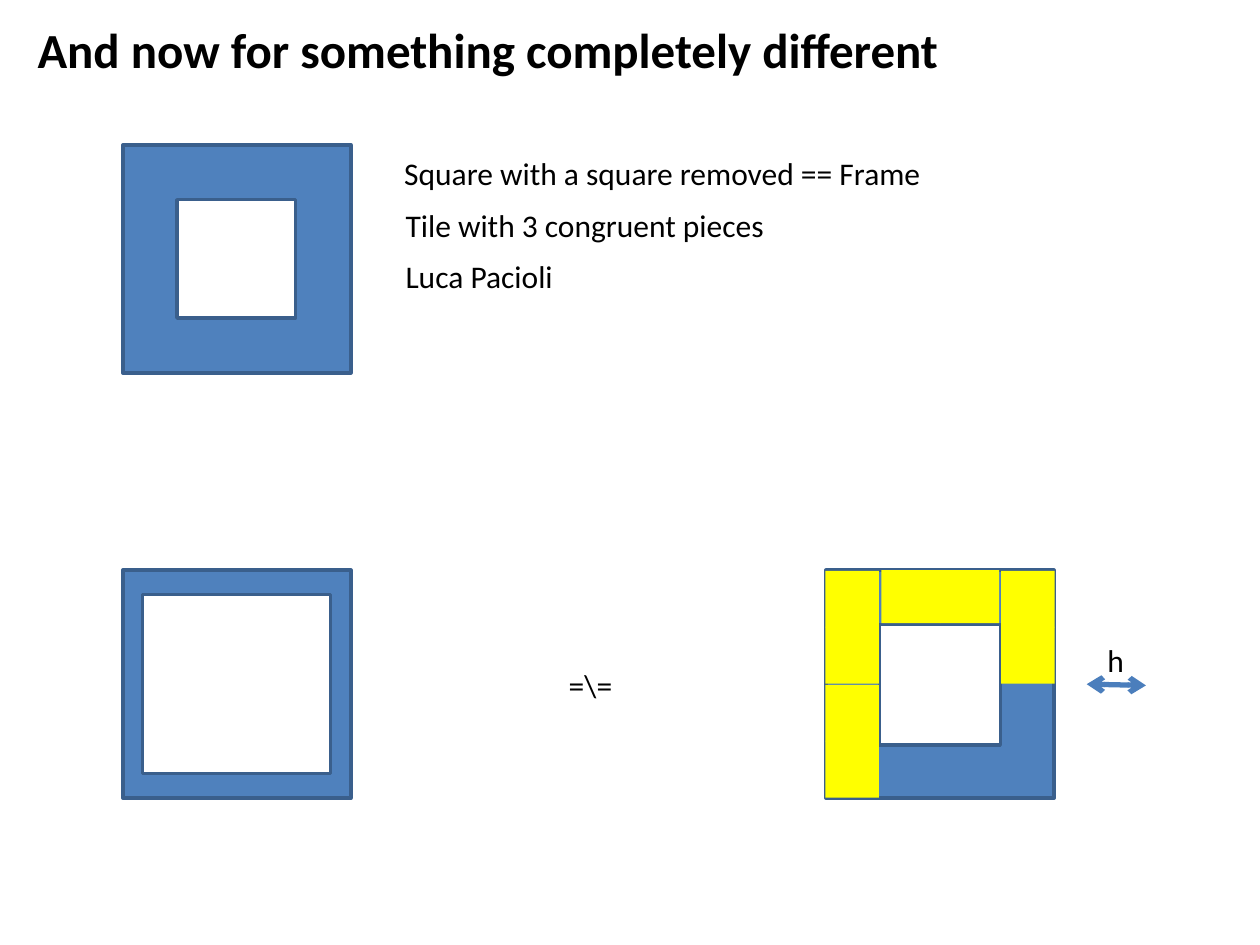
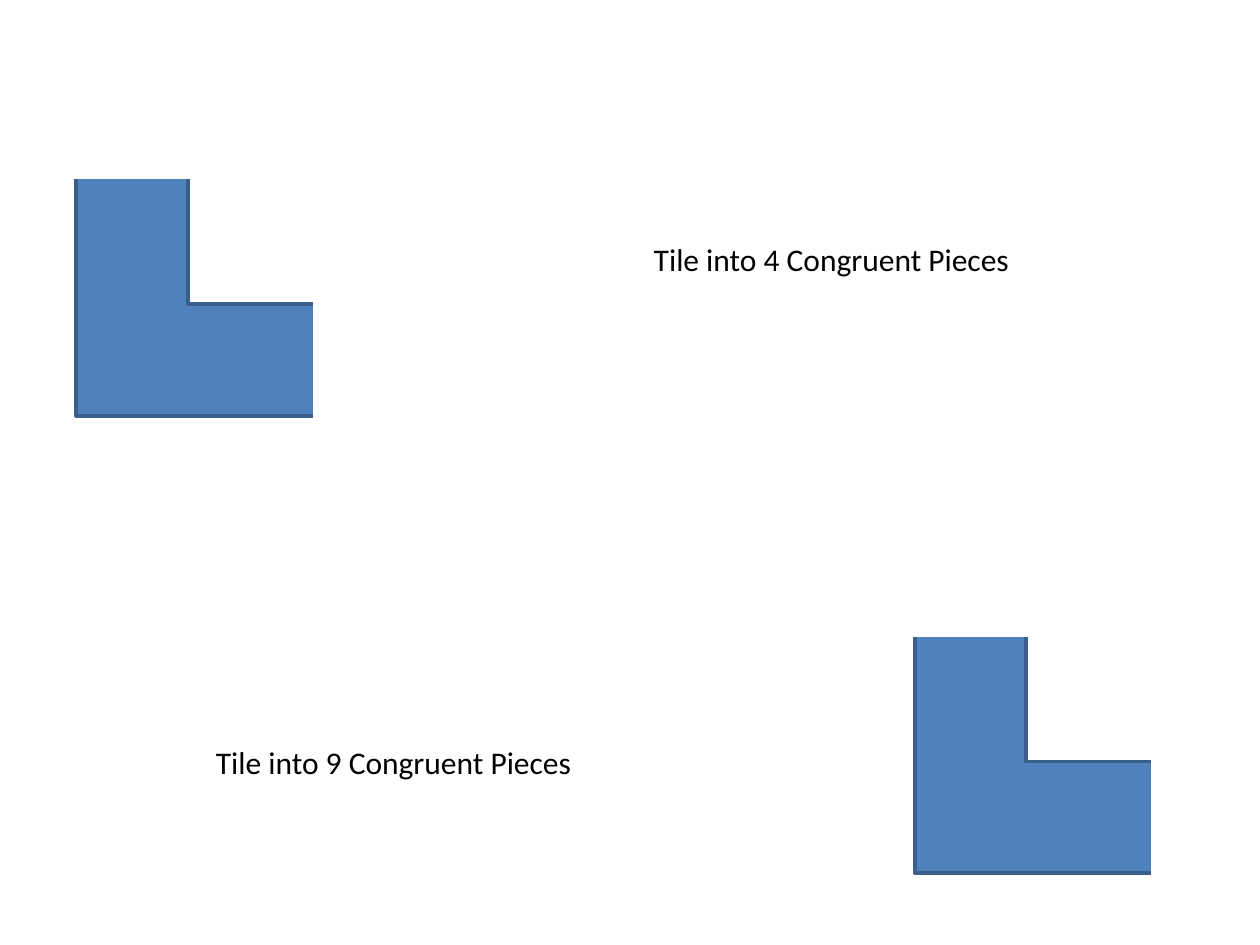
"""Build two slides of tiling puzzles on a grid of 100 columns by 75 rows."""
from typing import NamedTuple, Optional

from lxml.etree import SubElement
from pptx import Presentation
from pptx.dml.color import RGBColor
from pptx.enum.shapes import MSO_CONNECTOR, MSO_SHAPE
from pptx.enum.text import MSO_AUTO_SIZE
from pptx.oxml.ns import qn
from pptx.util import Inches, Pt

COLS = 100
WIDE, HIGH = Inches(10), Inches(7.5)
HUES = {"blue": "4F81BD", "edge": "3A5F8C", "white": "FFFFFF",
        "tile": "FFFF00", "arrow": "4B7EBC", "ink": "000000"}
FONT = "Calibri"
EDGE = Pt(2)
SIDE = 18.1


class Box(NamedTuple):
    left: float
    top: float
    width: float
    height: float


class Frame(NamedTuple):
    left: float
    top: float
    hole: Box
    side: float = SIDE


class Piece(NamedTuple):
    first: Box
    right: float
    down: float


class Label(NamedTuple):
    text: str
    box: Box
    size: int = 18
    bold: bool = False


class Bend(NamedTuple):
    left: float
    top: float


FRAMES = [
    Frame(9.75, 11.5, Box(14.05, 15.85, 9.4, 9.4)),
    Frame(9.75, 45.25, Box(11.3, 47.2, 14.95, 14.2)),
    Frame(65.55, 45.25, Box(69.8, 49.55, 9.6, 9.6)),
]
PIECES = [
    Piece(Box(65.5, 45.3, 4.25, 4.5), 0, 4.45),
    Piece(Box(65.5, 54.35, 4.25, 4.5), 0, 4.45),
    Piece(Box(69.95, 45.25, 4.7, 4.2), 4.65, 0),
    Piece(Box(79.45, 45.3, 4.25, 4.5), 0, 4.45),
]
FACTS = [
    Label("And now for something completely different",
          Box(2, 1.05, 74.4, 5.7), 28, True),
    Label("Square with a square removed == Frame", Box(31.1, 11.7, 43.5, 4)),
    Label("Tile with 3 congruent pieces", Box(31.2, 15.85, 31.5, 4)),
    Label("Luca Pacioli", Box(31.2, 19.9, 13.8, 4)),
    Label("=\\=", Box(44.15, 52.4, 5.5, 4)),
    Label("h", Box(86.9, 50.4, 3.4, 4)),
]
BENDS = [Bend(6.05, -4.8), Bend(72.6, 31.5)]
TASKS = [
    Label("Tile into 4 Congruent Pieces", Box(50.9, 18.6, 31.4, 4)),
    Label("Tile into 9 Congruent Pieces", Box(16.15, 58.5, 31.4, 4)),
]


def cell(count: float) -> int:
    """Turn a count of grid cells into a length."""
    return round(WIDE * count / COLS)


def hue(name: str) -> RGBColor:
    """Look up a colour."""
    return RGBColor.from_string(HUES[name])


def block(shapes, box: Box, fill: str, line: Optional[str] = "edge") -> None:
    """Draw a rectangle."""
    shape = shapes.add_shape(MSO_SHAPE.RECTANGLE, *map(cell, box))
    shape.shadow.inherit = False
    shape.fill.solid()
    shape.fill.fore_color.rgb = hue(fill)
    if line:
        shape.line.color.rgb = hue(line)
        shape.line.width = EDGE
    else:
        shape.line.fill.background()


def frame(shapes, item: Frame) -> None:
    """Draw a square with its hole."""
    block(shapes, Box(item.left, item.top, item.side, item.side), "blue")
    block(shapes, item.hole, "white")


def piece(shapes, item: Piece) -> None:
    """Draw two grouped tiles side by side."""
    group = shapes.add_group_shape()
    box = item.first
    for step in range(2):
        spot = box._replace(left=box.left + step * item.right,
                            top=box.top + step * item.down)
        block(group.shapes, spot, "tile", None)


def bend(shapes, item: Bend) -> None:
    """Draw a frame and cover all but its lower left corner."""
    left, top = item
    frame(shapes, Frame(left, top, Box(left + 8.85, top + 8.85, 20.1, 20.1), 37.8))
    for right, down in ((-5.2, -2.3), (18.9, 18.4)):
        block(shapes, Box(left + right, top + down, 48, 21.2), "white", "white")


def label(shapes, item: Label) -> None:
    """Write one line of text."""
    text = shapes.add_textbox(*map(cell, item.box)).text_frame
    text.word_wrap = False
    text.auto_size = MSO_AUTO_SIZE.SHAPE_TO_FIT_TEXT
    run = text.paragraphs[0].add_run()
    run.text = item.text
    run.font.name = FONT
    run.font.size = Pt(item.size)
    run.font.bold = item.bold
    run.font.color.rgb = hue("ink")


def arrow(shapes, start: tuple[float, float], end: tuple[float, float]) -> None:
    """Draw a line with a head at both ends."""
    line = shapes.add_connector(MSO_CONNECTOR.STRAIGHT, *map(cell, start + end))
    line.line.color.rgb = hue("arrow")
    line.line.width = Pt(3)
    props = line._element.spPr.find(qn("a:ln"))
    for tag in ("a:headEnd", "a:tailEnd"):
        SubElement(props, qn(tag), type="arrow")
    SubElement(line._element.spPr, qn("a:effectLst"))


def main() -> None:
    """Build and save the deck."""
    deck = Presentation()
    deck.slide_width, deck.slide_height = WIDE, HIGH
    blank = deck.slide_layouts[6]
    first, second = (deck.slides.add_slide(blank).shapes for _ in range(2))
    for shapes, draw, items in (
        (first, frame, FRAMES), (first, piece, PIECES), (first, label, FACTS),
        (second, bend, BENDS), (second, label, TASKS),
    ):
        for item in items:
            draw(shapes, item)
    arrow(first, (86.25, 54.3), (90.95, 54.4))
    deck.save("out.pptx")


if __name__ == "__main__":
    main()
